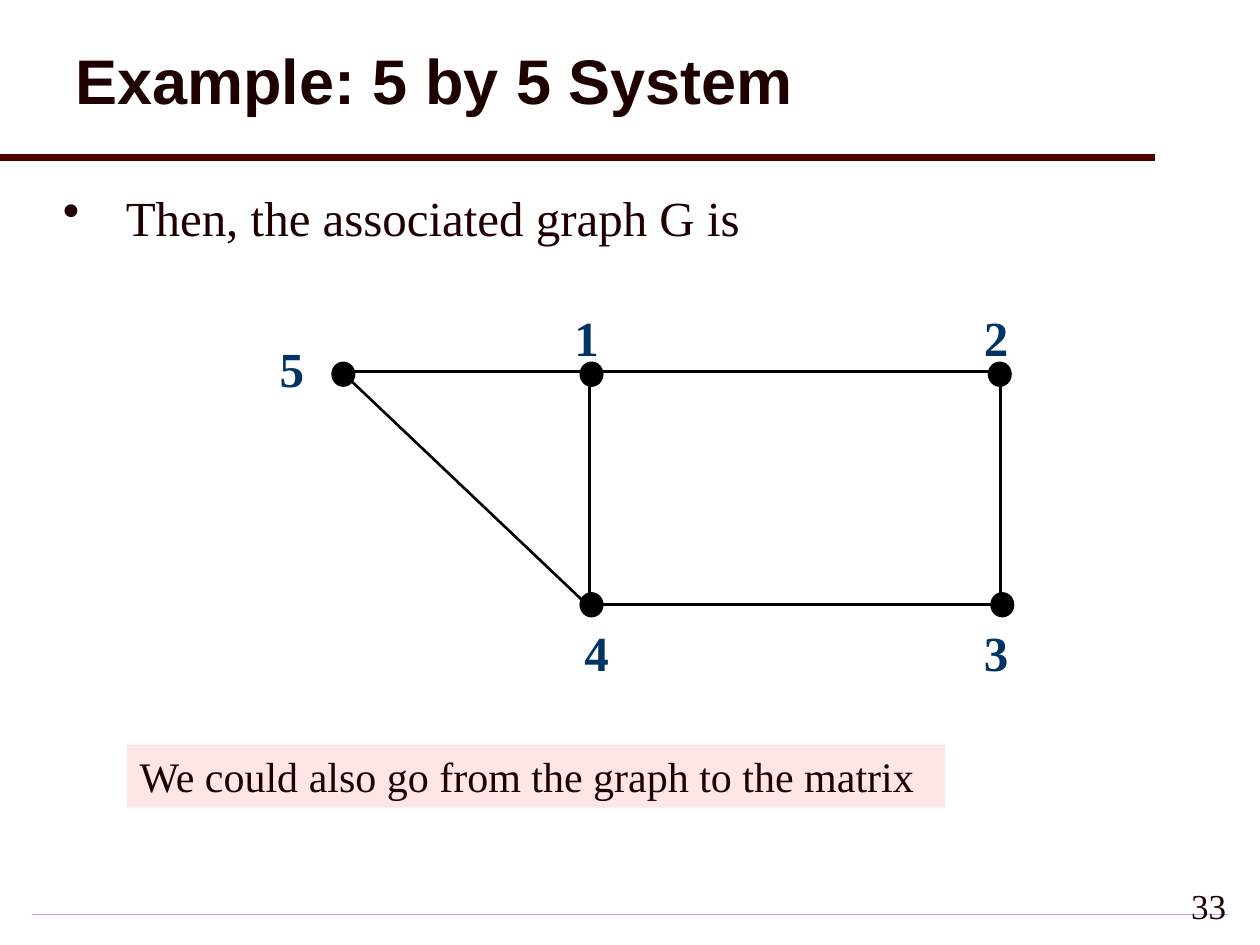
from lxml import etree
from pptx import Presentation
from pptx.dml.color import RGBColor
from pptx.enum.shapes import MSO_CONNECTOR, MSO_SHAPE
from pptx.enum.text import MSO_ANCHOR, PP_ALIGN
from pptx.oxml.ns import qn
from pptx.util import Pt

STRAIGHT = MSO_CONNECTOR.STRAIGHT
OVAL, RECTANGLE = MSO_SHAPE.OVAL, MSO_SHAPE.RECTANGLE
TOP, MIDDLE = MSO_ANCHOR.TOP, MSO_ANCHOR.MIDDLE
LEFT, RIGHT = PP_ALIGN.LEFT, PP_ALIGN.RIGHT
SERIF, SANS = "Times New Roman", "Arial"
INK, MAROON, NAVY, BLACK, PINK = "1E0000", "500000", "003366", "000000", "FFE6E6"

NODES = {
    "1": {"dot": (179.28, 38.16), "label": (168.48, 0)},
    "2": {"dot": (412.56, 38.16), "label": (402.48, 0)},
    "3": {"dot": (414, 169.92), "label": (402.48, 180)},
    "4": {"dot": (179.28, 169.92), "label": (174.24, 180)},
    "5": {"dot": (37.44, 38.16), "label": (0, 18)},
}
EDGES = [
    ((42.48, 43.2), (417.6, 43.2)),
    ((184.32, 43.2), (184.32, 177.84)),
    ((419.04, 46.8), (419.04, 181.44)),
    ((187.92, 176.4), (419.04, 176.4)),
    ((42.48, 43.2), (182.88, 176.4)),
]


def color(value):
    """Return the colour for a hex string."""
    return RGBColor.from_string(value)


def add_bullet(paragraph, indent):
    """Give a paragraph a round bullet with a hanging indent."""
    properties = paragraph._p.get_or_add_pPr()
    properties.set("marL", str(Pt(indent)))
    properties.set("indent", str(-Pt(indent)))
    bullet_color = etree.SubElement(properties, qn("a:buClr"))
    etree.SubElement(bullet_color, qn("a:srgbClr"), val=INK)
    etree.SubElement(properties, qn("a:buChar"), char="•")


def add_text(slide, text, box, size=28, font=SERIF, ink=INK, bold=False, align=LEFT,
             anchor=TOP, wrap=True, fill=None, inset_top=3.6, spacing=None, indent=None):
    """Add one paragraph of formatted text in a box."""
    shape = slide.shapes.add_textbox(*map(Pt, box))
    if fill:
        shape.fill.solid()
        shape.fill.fore_color.rgb = color(fill)
    frame = shape.text_frame
    frame.word_wrap = wrap
    frame.vertical_anchor = anchor
    frame.margin_top = Pt(inset_top)
    paragraph = frame.paragraphs[0]
    paragraph.text = text
    paragraph.alignment = align
    if spacing:
        paragraph.line_spacing = spacing
    if indent:
        add_bullet(paragraph, indent)
    paragraph.font.size = Pt(size)
    paragraph.font.name = font
    paragraph.font.bold = bold
    paragraph.font.color.rgb = color(ink)


def add_line(slide, start, end, ink=BLACK, width=1.5):
    """Draw a straight line between two points."""
    line = slide.shapes.add_connector(STRAIGHT, *map(Pt, (*start, *end)))
    line.line.color.rgb = color(ink)
    line.line.width = Pt(width)
    etree.SubElement(line._element.spPr, qn("a:effectLst"))


def add_header(slide, left, top, width, height):
    """Place the title and the rule below it."""
    add_text(slide, "Example: 5 by 5 System", (left + 36, top + 6, width - 36, height - 6),
             size=36, font=SANS, bold=True, anchor=MIDDLE, spacing=0.9)
    add_line(slide, (left, top + height), (left + 660, top + height), MAROON, 4)


def add_graph(slide, left, top):
    """Draw the labelled nodes and the edges of the graph."""
    for name, node in NODES.items():
        x, y = node["label"]
        add_text(slide, name, (left + x, top + y, 35.28, 38.16),
                 ink=NAVY, bold=True, inset_top=6.4)
    for node in NODES.values():
        x, y = node["dot"]
        dot = slide.shapes.add_shape(OVAL, *map(Pt, (left + x, top + y, 12.24, 12.96)))
        dot.shadow.inherit = False
        dot.fill.solid()
        dot.fill.fore_color.rgb = color(BLACK)
        dot.line.color.rgb = color(BLACK)
        dot.line.width = Pt(1.5)
    for (x1, y1), (x2, y2) in EDGES:
        add_line(slide, (left + x1, top + y1), (left + x2, top + y2))


def add_footer(slide, left, top, width, height):
    """Place the thin gradient rule and the page number."""
    rule = slide.shapes.add_shape(RECTANGLE, *map(Pt, (left, top + 24, width, 0.72)))
    rule.shadow.inherit = False
    rule.line.fill.background()
    rule.fill.gradient()
    for stop, value in zip(rule.fill.gradient_stops, ("CC99FF", "F3EBFF")):
        stop.color.rgb = color(value)
    linear = rule._element.spPr.find(".//" + qn("a:lin"))
    radial = etree.Element(qn("a:path"), path="shape")
    etree.SubElement(radial, qn("a:fillToRect"), l="50000", t="50000", r="50000", b="50000")
    linear.getparent().replace(linear, radial)
    add_text(slide, "33", (left + width - 144, top, 149.76, height), size=20,
             align=RIGHT, anchor=MIDDLE, wrap=False, inset_top=6.4)


def main():
    """Build and save the slide."""
    presentation = Presentation()
    presentation.slide_width, presentation.slide_height = Pt(720), Pt(540)
    slide = presentation.slides.add_slide(presentation.slide_layouts[6])
    add_header(slide, 0, 0, 696, 90)
    add_text(slide, "Then, the associated graph G is", (28.8, 100.8, 667.44, 68.4),
             inset_top=6.4, indent=36)
    add_graph(slide, 152.64, 169.2)
    add_footer(slide, 18, 498, 684, 36)
    add_text(slide, "We could also go from the graph to the matrix",
             (72.72, 425.52, 467.28, 36), size=24, anchor=MIDDLE, fill=PINK)
    presentation.save("out.pptx")


if __name__ == "__main__":
    main()
